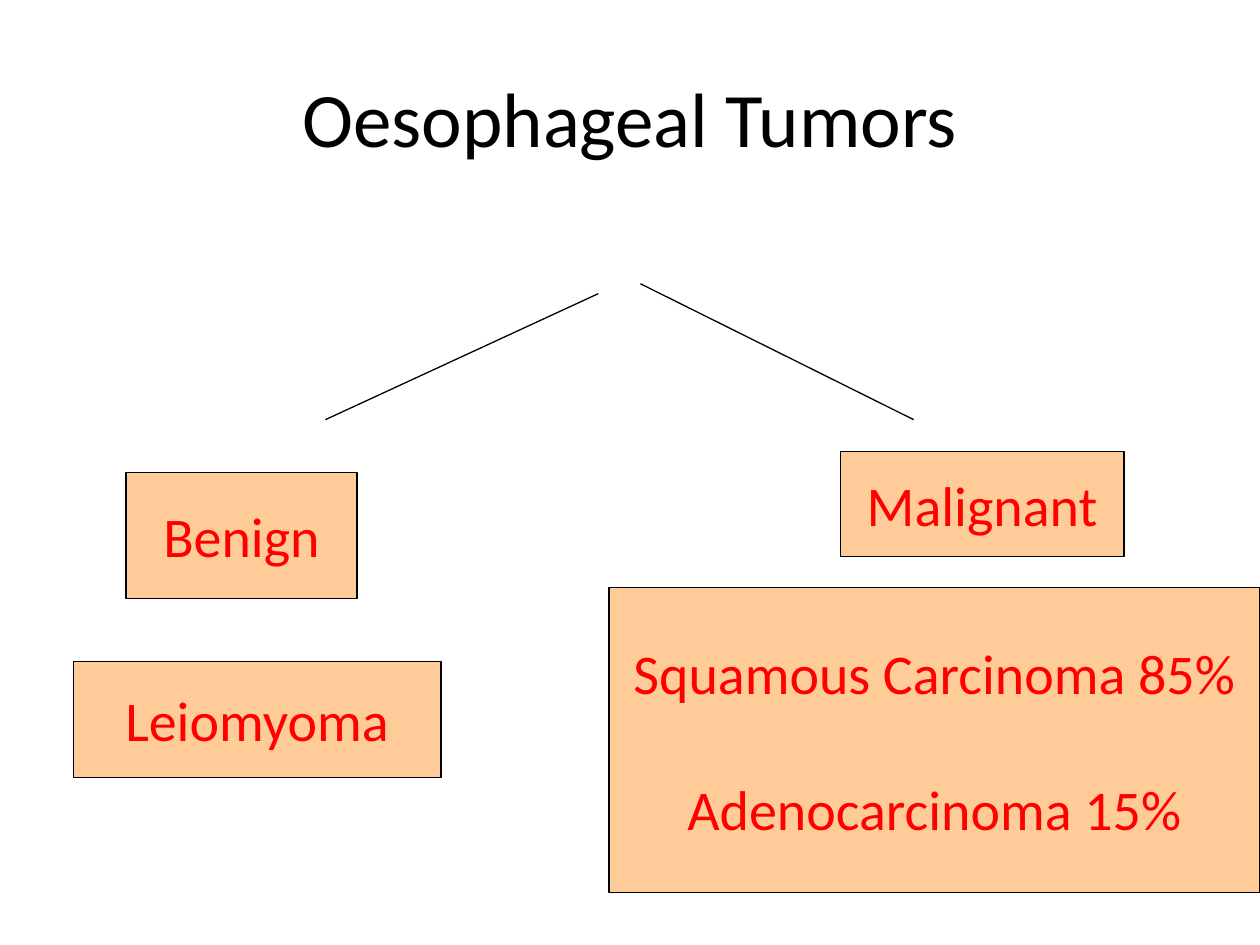
from lxml import etree
from pptx import Presentation
from pptx.dml.color import RGBColor
from pptx.enum.shapes import MSO_CONNECTOR, MSO_SHAPE
from pptx.enum.text import MSO_ANCHOR, PP_ALIGN
from pptx.oxml.ns import qn
from pptx.util import Cm, Pt

STRAIGHT = MSO_CONNECTOR.STRAIGHT
RECTANGLE = MSO_SHAPE.RECTANGLE
MIDDLE = MSO_ANCHOR.MIDDLE
CENTER = PP_ALIGN.CENTER
FONT = "Calibri"
COLORS = {"ink": "000000", "box": "FFCC99", "label": "FF0000"}


def color(name):
    return RGBColor.from_string(COLORS[name])


def format_para(para, size, color_name):
    para.alignment = CENTER
    para.font.name = FONT
    para.font.size = Pt(size)
    para.font.color.rgb = color(color_name)


def set_outline(line):
    line.color.rgb = color("ink")
    line.width = Pt(0.75)


def add_title(page, box, text):
    title = page.shapes.title
    title.left, title.top, title.width, title.height = map(Cm, box)
    title.text_frame.text = text
    title.text_frame.vertical_anchor = MIDDLE
    format_para(title.text_frame.paragraphs[0], 44, "ink")


def add_label(page, box, lines):
    label = page.shapes.add_shape(RECTANGLE, *map(Cm, box))
    label.shadow.inherit = False
    label.fill.solid()
    label.fill.fore_color.rgb = color("box")
    set_outline(label.line)
    frame = label.text_frame
    frame.word_wrap = False
    frame.vertical_anchor = MIDDLE
    for index, text in enumerate(lines):
        para = frame.add_paragraph() if index else frame.paragraphs[0]
        para.text = text
        format_para(para, 32, "label")
        if index:
            para.space_before = Pt(39)


def add_branch(page, origin, start, end, labels):
    left, top = origin
    points = [left + start[0], top + start[1], left + end[0], top + end[1]]
    branch = page.shapes.add_connector(STRAIGHT, *map(Cm, points))
    set_outline(branch.line)
    etree.SubElement(branch._element.spPr, qn("a:effectLst"))
    for (x, y, width, height), lines in labels:
        add_label(page, (left + x, top + y, width, height), lines)


def main():
    deck = Presentation()
    deck.slide_width, deck.slide_height = Cm(25.4), Cm(19.05)
    page = deck.slides.add_slide(deck.slide_layouts[5])
    add_title(page, (1.27, 0.76, 22.86, 3.18), "Oesophageal Tumors")
    add_branch(page, (1.48, 5.72), (10.58, 0.2), (5.08, 2.74), [
        ((1.06, 3.8, 4.66, 2.54), ["Benign"]),
        ((0, 7.62, 7.41, 2.33), ["Leiomyoma"]),
    ])
    add_branch(page, (12.28, 5.72), (0.63, 0), (6.14, 2.74), [
        ((4.66, 3.38, 5.72, 2.12), ["Malignant"]),
        ((0, 6.13, 13.12, 6.14),
         ["Squamous Carcinoma 85%", "Adenocarcinoma 15%"]),
    ])
    deck.save("out.pptx")


if __name__ == "__main__":
    main()
